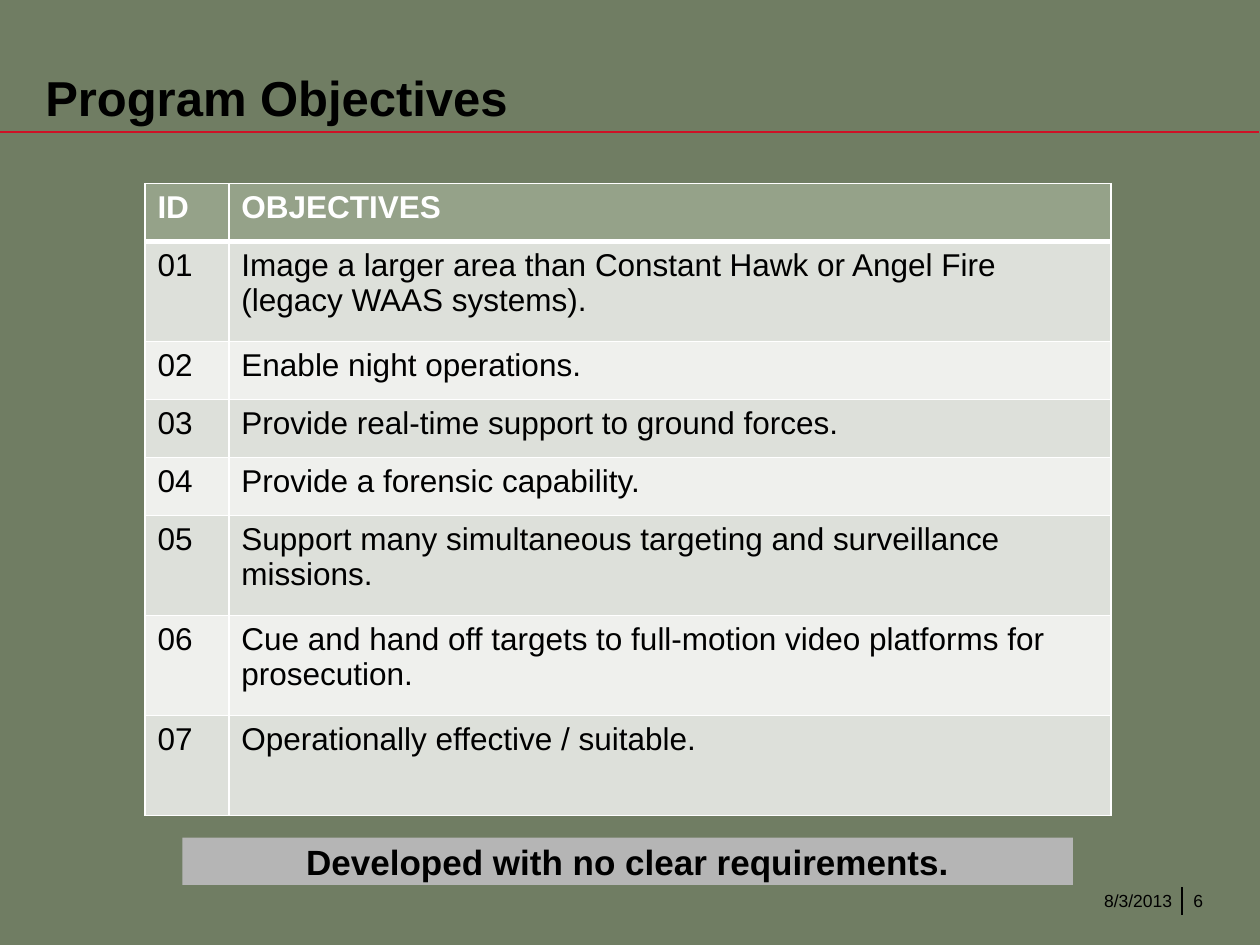
from lxml import etree
from pptx import Presentation
from pptx.dml.color import RGBColor
from pptx.enum import shapes, text
from pptx.oxml.ns import qn
from pptx.util import Pt

FONT = "Arial"
BLACK, WHITE, RED, GRAY = "000000", "FFFFFF", "CE1126", "B5B5B5"
OLIVE, SAGE, BANDS = "707D63", "95A289", ("DDE0DA", "EFF0ED")
LEFT, MID, RIGHT = text.PP_ALIGN.LEFT, text.PP_ALIGN.CENTER, text.PP_ALIGN.RIGHT
GOALS = [
    "Image a larger area than Constant Hawk or Angel Fire (legacy WAAS systems).",
    "Enable night operations.",
    "Provide real-time support to ground forces.",
    "Provide a forensic capability.",
    "Support many simultaneous targeting and surveillance missions.",
    "Cue and hand off targets to full-motion video platforms for prosecution.",
    "Operationally effective / suitable.",
]
SHORT, TALL = 33.15, 57.15
ROWS = [SHORT, TALL, SHORT, SHORT, SHORT, TALL, TALL, TALL]


def color(code):
    return RGBColor.from_string(code)


def paint(item, code):
    item.fill.solid()
    item.fill.fore_color.rgb = color(code)


def write(frame, words, size, code=BLACK, bold=False, align=LEFT):
    para = frame.paragraphs[0]
    para.alignment = align
    run = para.add_run()
    run.text = words
    font = run.font
    font.name, font.size, font.bold = FONT, Pt(size), bold
    font.color.rgb = color(code)


def setup(frame, anchor, pads):
    frame.word_wrap = True
    frame.auto_size = text.MSO_AUTO_SIZE.NONE
    frame.vertical_anchor = anchor
    (frame.margin_left, frame.margin_top,
     frame.margin_right, frame.margin_bottom) = map(Pt, pads)


def rule(slide, x1, y1, x2, y2, code):
    line = slide.shapes.add_connector(
        shapes.MSO_CONNECTOR.STRAIGHT, *map(Pt, (x1, y1, x2, y2)))
    line.line.color.rgb = color(code)
    line.line.width = Pt(1)
    etree.SubElement(line._element.spPr, qn("a:effectLst"))


def header(slide, x, y, w, h):
    rule(slide, x, y + h, x + w, y + h, RED)
    title = slide.shapes.title
    title.left, title.top, title.width, title.height = map(
        Pt, (x + 18.7, y, 569, h))
    setup(title.text_frame, text.MSO_ANCHOR.BOTTOM, (7.2, 3.6, 7.2, 3.6))
    write(title.text_frame, "Program Objectives", 28, bold=True)


def footer(slide, x, y, w, h):
    split = x + 173.5
    rule(slide, split, y + 6.5, split, y + 22.3, BLACK)
    parts = [("8/3/2013", x, split - 5.7, 7.2, RIGHT),
             ("6", split + 6.5, x + w, 0, LEFT)]
    for words, start, end, pad, align in parts:
        box = slide.shapes.add_textbox(*map(Pt, (start, y, end - start, h)))
        setup(box.text_frame, text.MSO_ANCHOR.MIDDLE, (pad, 3.6, 0, 3.6))
        write(box.text_frame, words, 10, align=align)


def banner(slide, x, y, w, h):
    bar = slide.shapes.add_shape(
        shapes.MSO_SHAPE.RECTANGLE, *map(Pt, (x, y, w, h)))
    bar.shadow.inherit = False
    paint(bar, GRAY)
    bar.line.fill.background()
    setup(bar.text_frame, text.MSO_ANCHOR.MIDDLE, (0, 0, 0, 0))
    write(bar.text_frame, "Developed with no clear requirements.", 20,
          bold=True, align=MID)


def border(cell, top, base):
    props = cell._tc.get_or_add_tcPr()
    sides = [("lnL", 1), ("lnR", 1), ("lnT", top), ("lnB", base)]
    for spot, (tag, width) in enumerate(sides):
        edge = etree.Element(qn("a:" + tag), w=str(Pt(width)))
        fill = etree.SubElement(edge, qn("a:solidFill"))
        etree.SubElement(fill, qn("a:srgbClr"), val=WHITE)
        props.insert(spot, edge)


def grid(slide, x, y, w, h):
    data = [("ID", "OBJECTIVES")]
    data += [(f"{num:02}", goal) for num, goal in enumerate(GOALS, 1)]
    table = slide.shapes.add_table(
        len(data), 2, *map(Pt, (x, y, w, h))).table
    table.columns[0].width = Pt(48)
    table.columns[1].width = Pt(w - 48)
    for row, (pair, high) in enumerate(zip(data, ROWS)):
        table.rows[row].height = Pt(high)
        head = row == 0
        for col, words in enumerate(pair):
            cell = table.cell(row, col)
            paint(cell, SAGE if head else BANDS[(row - 1) % 2])
            border(cell, 3 if row == 1 else 1, 3 if head else 1)
            write(cell.text_frame, words, 18, WHITE if head else BLACK, head)


def main():
    deck = Presentation()
    deck.slide_width, deck.slide_height = Pt(720), Pt(540)
    slide = deck.slides.add_slide(deck.slide_layouts[5])
    paint(slide.background, OLIVE)
    header(slide, 0, 21.6, 719.3, 54)
    footer(slide, 501.9, 500.4, 213.1, 28.8)
    banner(slide, 104.2, 478.7, 509, 27)
    grid(slide, 82.8, 105, 552, sum(ROWS))
    deck.save("out.pptx")


if __name__ == "__main__":
    main()
